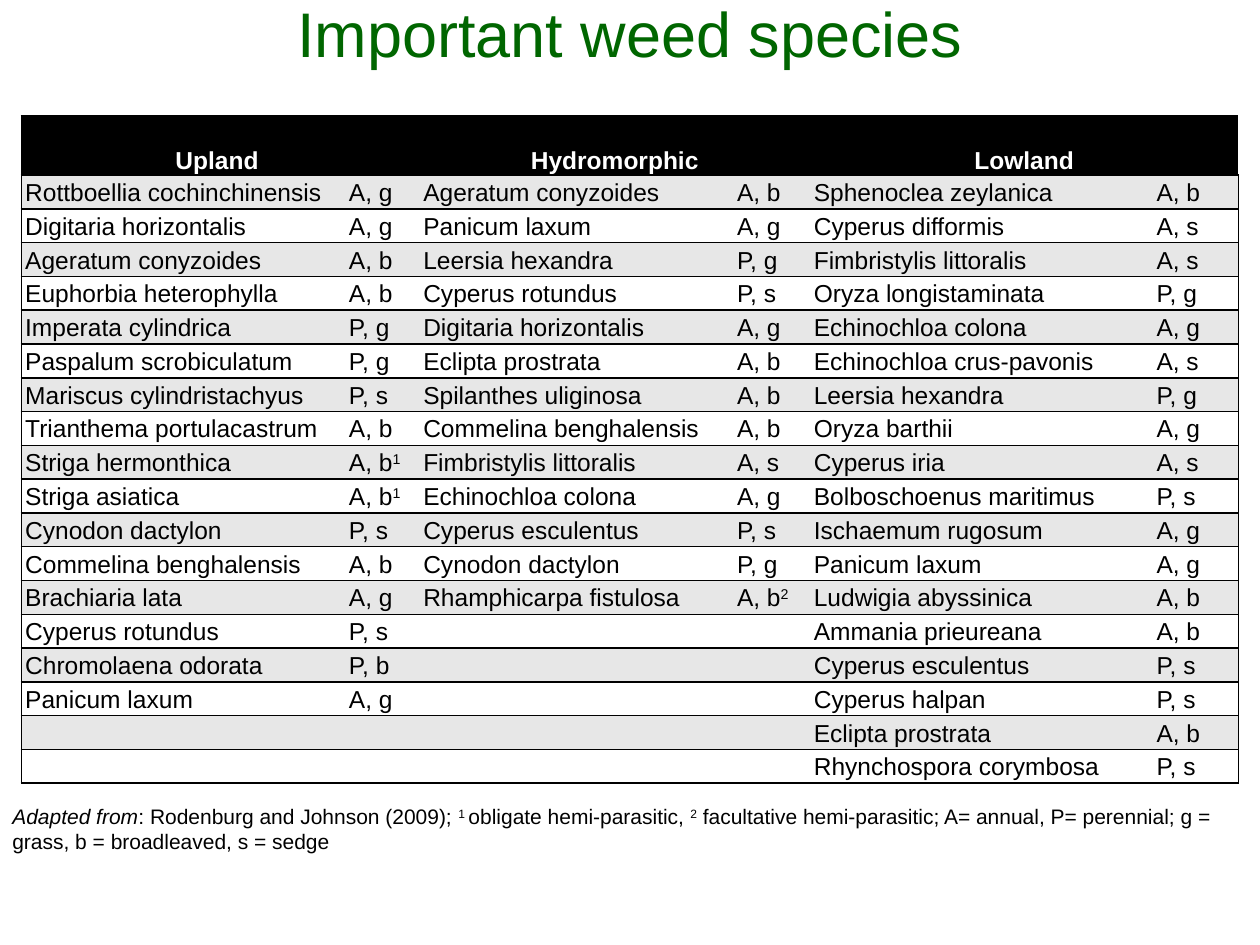
from itertools import zip_longest

from lxml.etree import SubElement
from pptx import Presentation
from pptx.dml.color import RGBColor
from pptx.enum.text import MSO_ANCHOR as Anchor, MSO_AUTO_SIZE as AutoSize, PP_ALIGN as Align
from pptx.oxml.ns import qn
from pptx.util import Inches, Pt

COLORS = {"title": "006600", "ink": "000000", "paper": "FFFFFF", "band": "E7E7E7"}
FONT = "Arial"
W, H = 10, 7.5
COLUMNS = [2.57, 0.59, 2.49, 0.61, 2.72, 0.68]
HEADER_H = 0.47
HABITATS = {
    "Upland ": [
        ("Rottboellia cochinchinensis", "A, g"), ("Digitaria horizontalis", "A, g"),
        ("Ageratum conyzoides", "A, b"), ("Euphorbia heterophylla", "A, b"),
        ("Imperata cylindrica", "P, g"), ("Paspalum scrobiculatum", "P, g"),
        ("Mariscus cylindristachyus", "P, s"), ("Trianthema portulacastrum", "A, b"),
        ("Striga hermonthica", "A, b^1"), ("Striga asiatica", "A, b^1"),
        ("Cynodon dactylon", "P, s"), ("Commelina benghalensis", "A, b"),
        ("Brachiaria lata", "A, g"), ("Cyperus rotundus", "P, s"),
        ("Chromolaena odorata", "P, b"), ("Panicum laxum", "A, g"),
    ],
    "Hydromorphic": [
        ("Ageratum conyzoides", "A, b"), ("Panicum laxum", "A, g"),
        ("Leersia hexandra", "P, g"), ("Cyperus rotundus", "P, s"),
        ("Digitaria horizontalis", "A, g"), ("Eclipta prostrata", "A, b"),
        ("Spilanthes uliginosa", "A, b"), ("Commelina benghalensis", "A, b"),
        ("Fimbristylis littoralis", "A, s"), ("Echinochloa colona", "A, g"),
        ("Cyperus esculentus", "P, s"), ("Cynodon dactylon", "P, g"),
        ("Rhamphicarpa fistulosa", "A, b^2"),
    ],
    "Lowland": [
        ("Sphenoclea zeylanica", "A, b"), ("Cyperus difformis", "A, s"),
        ("Fimbristylis littoralis", "A, s"), ("Oryza longistaminata", "P, g"),
        ("Echinochloa colona", "A, g"), ("Echinochloa crus-pavonis", "A, s"),
        ("Leersia hexandra", "P, g"), ("Oryza barthii", "A, g"),
        ("Cyperus iria", "A, s"), ("Bolboschoenus maritimus", "P, s"),
        ("Ischaemum rugosum", "A, g"), ("Panicum laxum", "A, g"),
        ("Ludwigia abyssinica", "A, b"), ("Ammania prieureana", "A, b"),
        ("Cyperus esculentus", "P, s"), ("Cyperus halpan", "P, s"),
        ("Eclipta prostrata", "A, b"), ("Rhynchospora corymbosa", "P, s"),
    ],
}


def add_text(p, text, size=14, color="ink", bold=False, italic=False, align=Align.LEFT, spacing=None):
    """Add text to a paragraph; each ^ switches superscript on or off."""
    p.alignment = align
    if spacing:
        p.line_spacing = spacing
    for i, part in enumerate(text.split("^")):
        if not part:
            continue
        r = p.add_run()
        r.text = part
        r.font.name, r.font.size = FONT, Pt(size)
        r.font.bold, r.font.italic = bold, italic
        r.font.color.rgb = RGBColor.from_string(COLORS[color])
        if i % 2:
            r.font._element.set("baseline", "30000")
    if not text:
        SubElement(p._p, qn("a:endParaRPr"), sz=str(size * 100))


def style_cell(cell, fill, sides):
    """Set a cell's margins, fill and the borders on the named sides."""
    cell.margin_left = cell.margin_right = Inches(0.03)
    cell.margin_top = cell.margin_bottom = 0
    tc_pr = cell._tc.get_or_add_tcPr()
    for side in "LRTB":
        ln = SubElement(tc_pr, qn(f"a:ln{side}"), w=str(Pt(1)))
        if side in sides:
            paint = SubElement(ln, qn("a:solidFill"))
            SubElement(paint, qn("a:srgbClr"), val=COLORS["ink"])
        else:
            SubElement(ln, qn("a:noFill"))
    cell.fill.solid()
    cell.fill.fore_color.rgb = RGBColor.from_string(COLORS[fill])


def add_title(s, box, text):
    """Place and format the title placeholder."""
    sp = s.shapes.title
    sp.left, sp.top, sp.width, sp.height = map(Inches, box)
    tf = sp.text_frame
    tf.vertical_anchor = Anchor.MIDDLE
    tf.auto_size = AutoSize.NONE
    add_text(tf.paragraphs[0], text, size=36, color="title", align=Align.CENTER)


def add_species_table(s, box, habitats):
    """Add a table with a name and a type column for each habitat."""
    pairs = list(zip_longest(*habitats.values(), fillvalue=("", "")))
    body = [[text for pair in row for text in pair] for row in pairs]
    header = [text for habitat in habitats for text in (habitat, "")]
    rows = [header, *body]
    last = len(header) - 1
    table = s.shapes.add_table(len(rows), len(header), *map(Inches, box)).table
    table.first_row = table.horz_banding = False
    for column, width in zip(table.columns, COLUMNS):
        column.width = Inches(box[2] * width / sum(COLUMNS))
    for i, row in enumerate(rows):
        table.rows[i].height = Inches((box[3] - HEADER_H) / len(body) if i else HEADER_H)
        fill = ("band" if i % 2 else "paper") if i else "ink"
        for j, text in enumerate(row):
            cell = table.cell(i, j)
            style_cell(cell, fill, "TB" + "L" * (j == 0) + "R" * (j == last))
            p = cell.text_frame.paragraphs[0]
            if i:
                add_text(p, text, spacing=1.15 if text else None)
            else:
                cell.vertical_anchor = Anchor.BOTTOM
                add_text(p, text, color="paper", bold=True, align=Align.CENTER, spacing=2 if text else None)
    for j in range(0, last, 2):
        table.cell(0, j).merge(table.cell(0, j + 1))


def add_footnote(s, box):
    """Add the citation and the key to the abbreviations."""
    tf = s.shapes.add_textbox(*map(Inches, box)).text_frame
    tf.word_wrap = True
    p = tf.paragraphs[0]
    add_text(p, "Adapted from", size=12, italic=True)
    add_text(p, ": Rodenburg and Johnson (2009); ^1 ^obligate hemi-parasitic, ^2^ facultative "
                "hemi-parasitic; A= annual, P= perennial; g = grass, b = broadleaved, s = sedge", size=12)


def main():
    """Build and save the slide."""
    prs = Presentation()
    prs.slide_width, prs.slide_height = Inches(W), Inches(H)
    s = prs.slides.add_slide(prs.slide_layouts[5])
    add_title(s, (0, -0.1, W, 0.71), "Important weed species")
    add_species_table(s, (0.17, 0.92, sum(COLUMNS), 5.3), HABITATS)
    add_footnote(s, (0, 6.33, W, 0.5))
    prs.save("out.pptx")


if __name__ == "__main__":
    main()
